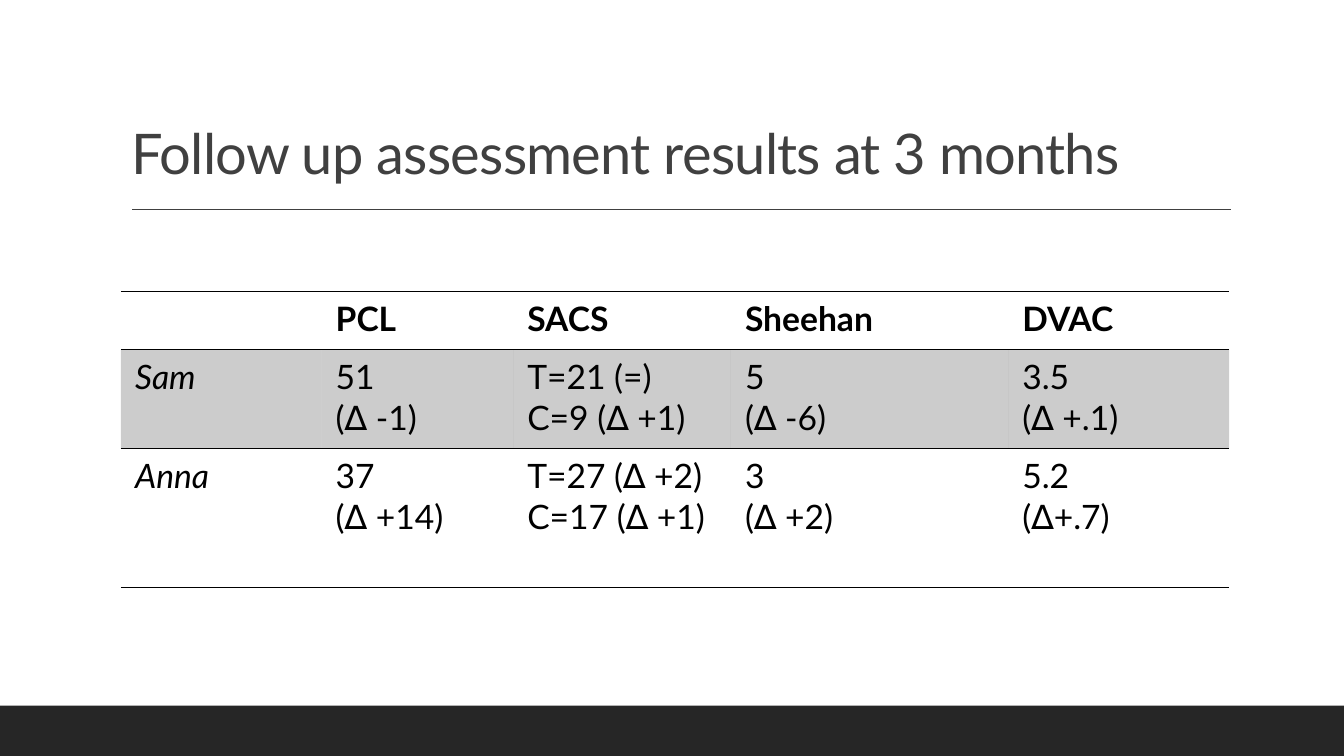
from lxml.etree import SubElement as Sub
from pptx import Presentation
from pptx.dml.color import RGBColor as RGB
from pptx.enum.shapes import MSO_CONNECTOR as Conn, MSO_SHAPE as Shape
from pptx.enum.text import MSO_ANCHOR as Anchor, MSO_AUTO_SIZE as Auto, PP_ALIGN as Align
from pptx.oxml.ns import qn
from pptx.util import Inches, Pt

COLORS = {"white": "FFFFFF", "gray": "404040", "dark": "262626", "black": "000000"}
PLAIN = "{2D5ABB26-0587-4C30-8999-92F81FD0307C}"
COLS = [1.99, 1.9, 2.16, 2.75, 2.19]
ROWS = [0.58, 0.98, 1.38]
SCORES = [
    ["", "PCL", "SACS", "Sheehan", "DVAC"],
    ["Sam", "51\n(∆ -1)", "T=21 (=)\nC=9 (∆ +1)", "5\n(∆ -6)", "3.5\n(∆ +.1)"],
    ["Anna", "37\n(∆ +14)", "T=27 (∆ +2) C=17 (∆ +1)", "3\n(∆ +2)", "5.2\n(∆+.7)"],
]


def color(name):
    return RGB.from_string(COLORS[name])


def write(frame, text, size=24, tint="black", bold=False, italic=False, lead=1.0, track=0):
    frame.word_wrap = True
    frame.text = text
    for para in frame.paragraphs:
        para.alignment, para.line_spacing = Align.LEFT, lead
        for run in para.runs:
            font = run.font
            font.name, font.size = "Lato", Pt(size)
            font.bold, font.italic = bold, italic
            font.color.rgb = color(tint)
            if track:
                run._r.get_or_add_rPr().set("spc", str(track))


class Deck:
    """Holds the style and the current slide, and adds each kind of element."""

    def __init__(self):
        self.prs = Presentation()
        self.prs.slide_width, self.prs.slide_height = Inches(13.33), Inches(7.5)
        self.slide = self.prs.slides.add_slide(self.prs.slide_layouts[5])
        back = self.slide.background.fill
        back.solid()
        back.fore_color.rgb = color("white")

    def title(self, text, x, y, w, h):
        box = self.slide.shapes.title
        box.left, box.top, box.width, box.height = map(Inches, (x, y, w, h))
        frame = box.text_frame
        frame.auto_size, frame.vertical_anchor = Auto.NONE, Anchor.BOTTOM
        write(frame, text, size=40, tint="gray", lead=0.9, track=-50)

    def rule(self, x, y, end):
        line = self.slide.shapes.add_connector(
            Conn.STRAIGHT, Inches(x), Inches(y), Inches(end), Inches(y))
        line.line.color.rgb, line.line.width = color("gray"), Pt(1)
        Sub(line._element.spPr, qn("a:effectLst"))

    def bar(self, x, y, w, h, tint):
        bar = self.slide.shapes.add_shape(Shape.RECTANGLE, *map(Inches, (x, y, w, h)))
        bar.shadow.inherit = False
        bar.fill.solid()
        bar.fill.fore_color.rgb = color(tint)
        bar.line.fill.background()

    def edge(self, cell, side):
        line = Sub(cell._tc.get_or_add_tcPr(), qn(f"a:ln{side}"), w=str(Pt(1)))
        fill = Sub(line, qn("a:solidFill"))
        Sub(fill, qn("a:srgbClr"), val=COLORS["black"])

    def shade(self, cell, alpha):
        cell.fill.solid()
        cell.fill.fore_color.rgb = color("black")
        tint = cell._tc.tcPr.find(qn("a:solidFill")).find(qn("a:srgbClr"))
        Sub(tint, qn("a:alpha"), val=str(alpha * 1000))

    def table(self, data, x, y):
        frame = self.slide.shapes.add_table(
            len(ROWS), len(COLS), Inches(x), Inches(y), Inches(sum(COLS)), Inches(sum(ROWS)))
        grid = frame.table
        grid.horz_banding = False
        grid._tbl.tblPr.find(qn("a:tableStyleId")).text = PLAIN
        for col, width in zip(grid.columns, COLS):
            col.width = Inches(width)
        for r, (row, height) in enumerate(zip(grid.rows, ROWS)):
            row.height = Inches(height)
            for c, cell in enumerate(row.cells):
                cell.margin_left = cell.margin_right = Inches(0.14)
                cell.margin_top = cell.margin_bottom = Inches(0.07)
                write(cell.text_frame, data[r][c], bold=r == 0, italic=c == 0)
                if r < 2:
                    self.edge(cell, "T")
                if r != 1:
                    self.edge(cell, "B")
                    cell.fill.background()
                else:
                    self.shade(cell, 20)


def main():
    deck = Deck()
    deck.title("Follow up assessment results at 3 months", 1.2, 0.31, 11, 1.59)
    deck.rule(1.31, 2.08, 12.21)
    deck.bar(0, 7, 13.33, 0.5, "dark")
    deck.table(SCORES, 1.2, 2.89)
    deck.prs.save("out.pptx")


if __name__ == "__main__":
    main()
